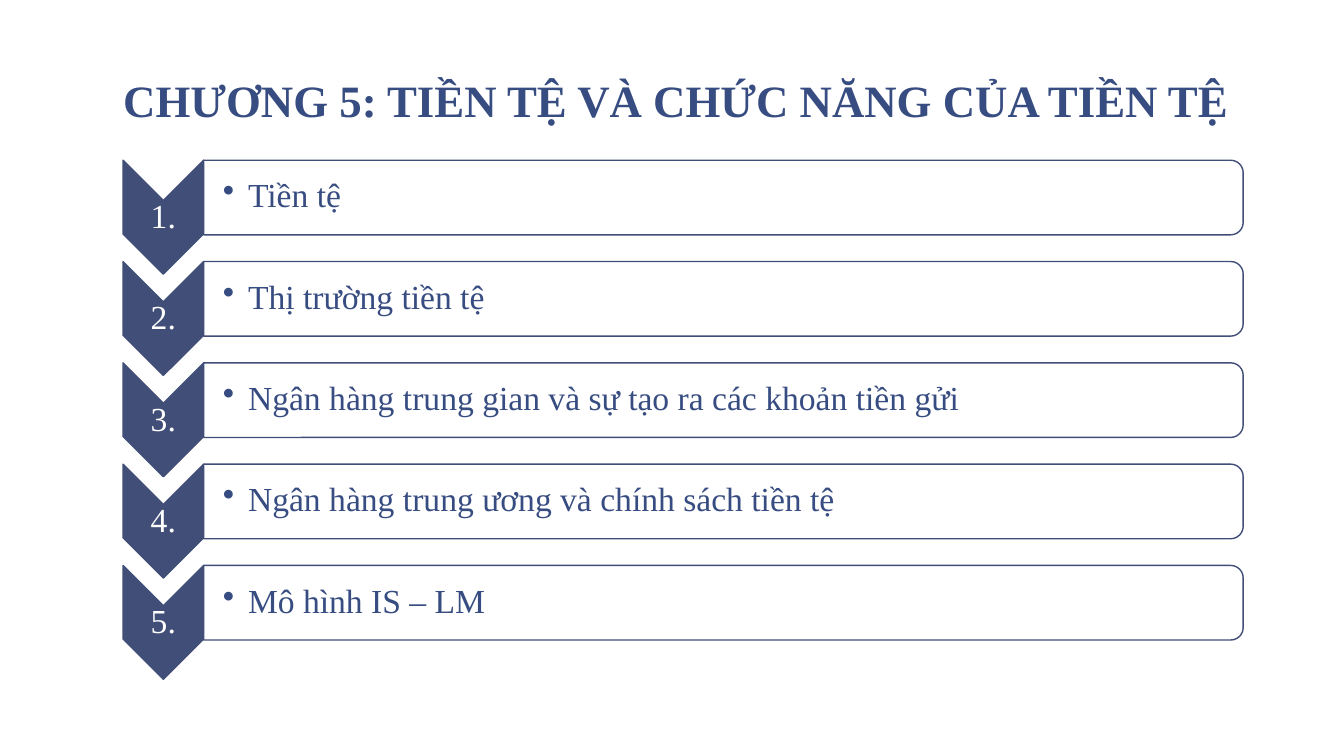
import pptx
import pptx.util
import pptx.dml.color
import pptx.enum.shapes
import pptx.enum.text
import pptx.oxml.ns
import lxml.etree

Inches = pptx.util.Inches
Pt = pptx.util.Pt
Shape = pptx.enum.shapes.MSO_SHAPE
Align = pptx.enum.text.PP_ALIGN
Anchor = pptx.enum.text.MSO_ANCHOR

HUES = {"ink": "374C81", "navy": "414E77", "white": "FFFFFF"}
TITLE = "CHƯƠNG 5: TIỀN TỆ VÀ CHỨC NĂNG CỦA TIỀN TỆ"
TOPICS = [
    "Tiền tệ",
    "Thị trường tiền tệ",
    "Ngân hàng trung gian và sự tạo ra các khoản tiền gửi",
    "Ngân hàng trung ương và chính sách tiền tệ",
    "Mô hình IS – LM",
]


def hue(name):
    """Return the named colour."""
    return pptx.dml.color.RGBColor.from_string(HUES[name])


def apply(item, values):
    """Set each attribute in values on item."""
    for name, value in values.items():
        setattr(item, name, value)


def place(item, box):
    """Move item to a box given in inches."""
    apply(item, dict(zip(("left", "top", "width", "height"), map(Inches, box))))


def add_bullet(para):
    """Give the paragraph a hanging round bullet."""
    props = para._p.get_or_add_pPr()
    props.set("marL", str(Inches(0.25)))
    props.set("indent", str(-Inches(0.25)))
    mark = lxml.etree.SubElement(props, pptx.oxml.ns.qn("a:buChar"))
    mark.set("char", "•")


def write(item, text, frame, para, font, color, bullet=False):
    """Write one formatted paragraph into item."""
    body = item.text_frame
    apply(body, {"word_wrap": True, "auto_size": pptx.enum.text.MSO_AUTO_SIZE.NONE, **frame})
    line = body.paragraphs[0]
    line.text = text
    apply(line, para)
    if bullet:
        add_bullet(line)
    apply(line.runs[0].font, {"name": "Times New Roman", **font})
    line.runs[0].font.color.rgb = hue(color)


def add_turned(slide, kind, box, fill):
    """Draw a shape turned by 90 degrees that fills the upright box."""
    left, top, width, height = box
    shift = (width - height) / 2
    item = slide.shapes.add_shape(
        kind, *map(Inches, (left + shift, top - shift, height, width)))
    item.rotation = 90
    item.shadow.inherit = False
    item.fill.solid()
    item.fill.fore_color.rgb = hue(fill)
    item.line.color.rgb = hue("navy")
    item.line.width = Pt(1)


def add_label(slide, box, text, inset, para, color, bullet=False):
    """Add a middle-anchored label in the box."""
    item = slide.shapes.add_textbox(*map(Inches, box))
    pad = Inches(0.02)
    frame = {"vertical_anchor": Anchor.MIDDLE, "margin_left": Inches(inset),
             "margin_top": pad, "margin_right": pad, "margin_bottom": pad}
    write(item, text, frame, {"line_spacing": 0.9, **para},
          {"size": Pt(24)}, color, bullet)


def add_title(slide, box):
    """Fill the title placeholder."""
    item = slide.shapes.title
    place(item, box)
    frame = {"vertical_anchor": Anchor.BOTTOM,
             "margin_left": Inches(0.13), "margin_right": Inches(0.13),
             "margin_top": Inches(0.07), "margin_bottom": Inches(0.07)}
    write(item, TITLE, frame, {"alignment": Align.CENTER, "line_spacing": 0.85},
          {"size": Pt(32), "bold": True}, "ink")


def add_topic(slide, box, number, text):
    """Draw a numbered chevron and its topic bar."""
    left, top, width, height = box
    arm, bar = 0.8, 0.74
    add_turned(slide, Shape.CHEVRON, (left, top, arm, height), "navy")
    add_label(slide, (left, top + 0.4, arm, 0.34), f"{number}.", 0.02,
              {"alignment": Align.CENTER}, "white")
    start, span = left + arm, width - arm
    add_turned(slide, Shape.ROUND_2_SAME_RECTANGLE, (start, top, span, bar), "white")
    add_label(slide, (start, top + 0.03, span - 0.04, 0.67), text, 0.19,
              {"alignment": Align.LEFT}, "ink", True)


def add_topics(slide, box):
    """Stack the topics at equal steps in the box."""
    left, top, width, height = box
    tall = 1.13
    step = (height - tall) / (len(TOPICS) - 1)
    for index, text in enumerate(TOPICS):
        add_topic(slide, (left, top + index * step, width, tall), index + 1, text)


def main():
    """Build and save the slide."""
    deck = pptx.Presentation()
    apply(deck, {"slide_width": Inches(13.33), "slide_height": Inches(7.5)})
    slide = deck.slides.add_slide(deck.slide_layouts[5])
    slide.background.fill.solid()
    slide.background.fill.fore_color.rgb = hue("white")
    add_title(slide, (1.08, 0.58, 11.25, 0.75))
    add_topics(slide, (1.22, 1.59, 11.11, 5.15))
    deck.save("out.pptx")


if __name__ == "__main__":
    main()
